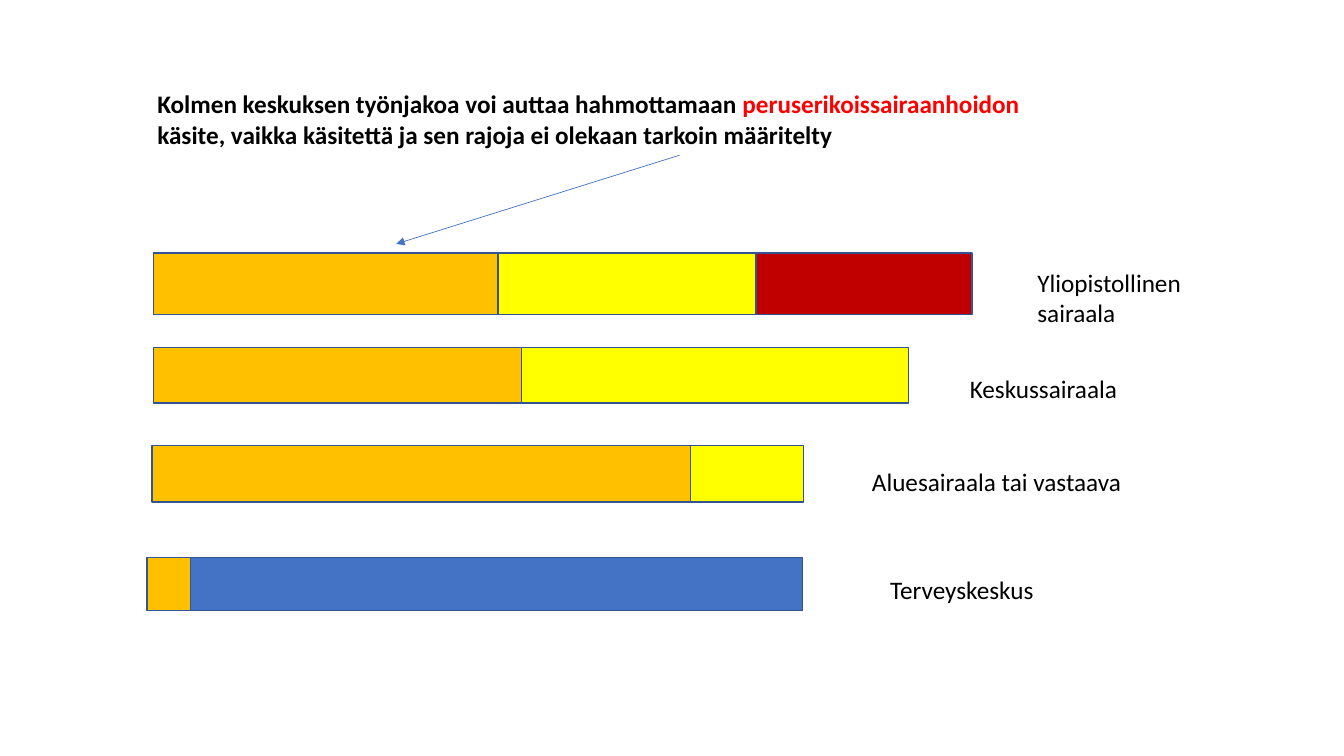
from lxml import etree
from pptx import Presentation
from pptx.dml.color import RGBColor
from pptx.enum.shapes import MSO_CONNECTOR as Connector, MSO_SHAPE as Shape
from pptx.enum.text import MSO_ANCHOR as Anchor, MSO_AUTO_SIZE as AutoSize, PP_ALIGN as Align
from pptx.oxml.ns import qn
from pptx.util import Inches, Pt

COLORS = {
    "text": "000000",
    "highlight": "FF0000",
    "outline": "325491",
    "arrow": "4472C4",
    "basic": "FFC000",
    "central": "FFFF00",
    "university": "C00000",
    "primary": "4472C4",
}

TITLE_RUNS = [
    ("Kolmen keskuksen työnjakoa voi auttaa hahmottamaan ", "text"),
    ("peruserikoissairaanhoidon ", "highlight"),
    ("käsite, vaikka käsitettä ja sen rajoja ei olekaan tarkoin määritelty", "text"),
]

CARE_LEVELS = [
    ("Yliopistollinen sairaala", (1.52, 2.51, 0.61),
     [("basic", 3.42), ("central", 2.56), ("university", 2.14)], (10.19, 2.6, 1.95, 0.71)),
    ("Keskussairaala", (1.52, 3.45, 0.55),
     [("basic", 3.65), ("central", 3.84)], (9.52, 3.65, 2.27, 0.4)),
    ("Aluesairaala tai vastaava", (1.51, 4.42, 0.56),
     [("basic", 5.34), ("central", 1.12)], (8.55, 4.58, 3.24, 0.4)),
    ("Terveyskeskus", (1.46, 5.53, 0.53),
     [("basic", 0.43), ("primary", 6.07)], (8.73, 5.65, 2.4, 0.4)),
]


def color(name):
    """Return the named colour."""
    return RGBColor.from_string(COLORS[name])


def write_text(shape, runs, bold=False):
    """Write coloured runs as one left-aligned paragraph."""
    frame = shape.text_frame
    frame.word_wrap = True
    frame.auto_size = AutoSize.NONE
    frame.vertical_anchor = Anchor.TOP
    paragraph = frame.paragraphs[0]
    paragraph.alignment = Align.LEFT
    paragraph.line_spacing = 1.0
    for text, color_name in runs:
        run = paragraph.add_run()
        run.text = text
        run.font.name = "Calibri"
        run.font.size = Pt(18)
        run.font.bold = bold
        run.font.color.rgb = color(color_name)


def place_title(slide, box):
    """Move the title placeholder to its box and fill it."""
    title = slide.shapes.title
    title.left, title.top, title.width, title.height = map(Inches, box)
    write_text(title, TITLE_RUNS, bold=True)


def add_bar(slide, origin, segments):
    """Lay segments side by side from the origin."""
    left, top, height = origin
    for color_name, width in segments:
        segment = slide.shapes.add_shape(
            Shape.RECTANGLE, Inches(left), Inches(top), Inches(width), Inches(height))
        segment.shadow.inherit = False
        segment.fill.solid()
        segment.fill.fore_color.rgb = color(color_name)
        segment.line.color.rgb = color("outline")
        segment.line.width = Pt(1)
        left += width


def add_label(slide, text, box):
    """Add the name of a care level in its box."""
    label = slide.shapes.add_textbox(*map(Inches, box))
    write_text(label, [(text, "text")])


def add_arrow(slide, start, end):
    """Draw a thin arrow from start to end."""
    arrow = slide.shapes.add_connector(Connector.STRAIGHT, *map(Inches, start + end))
    arrow.line.color.rgb = color("arrow")
    arrow.line.width = Pt(0.5)
    line = arrow.line._get_or_add_ln()
    etree.SubElement(line, qn("a:tailEnd"), type="triangle")
    etree.SubElement(arrow._element.spPr, qn("a:effectLst"))


def main():
    """Build and save the slide."""
    presentation = Presentation()
    presentation.slide_width = Inches(13.33)
    presentation.slide_height = Inches(7.5)
    slide = presentation.slides.add_slide(presentation.slide_layouts.get_by_name("Title Only"))
    place_title(slide, (1.46, 0.83, 9.06, 0.71))
    for name, origin, segments, label_box in CARE_LEVELS:
        add_bar(slide, origin, segments)
        add_label(slide, name, label_box)
    add_arrow(slide, (6.74, 1.54), (3.93, 2.42))
    presentation.save("out.pptx")


if __name__ == "__main__":
    main()
